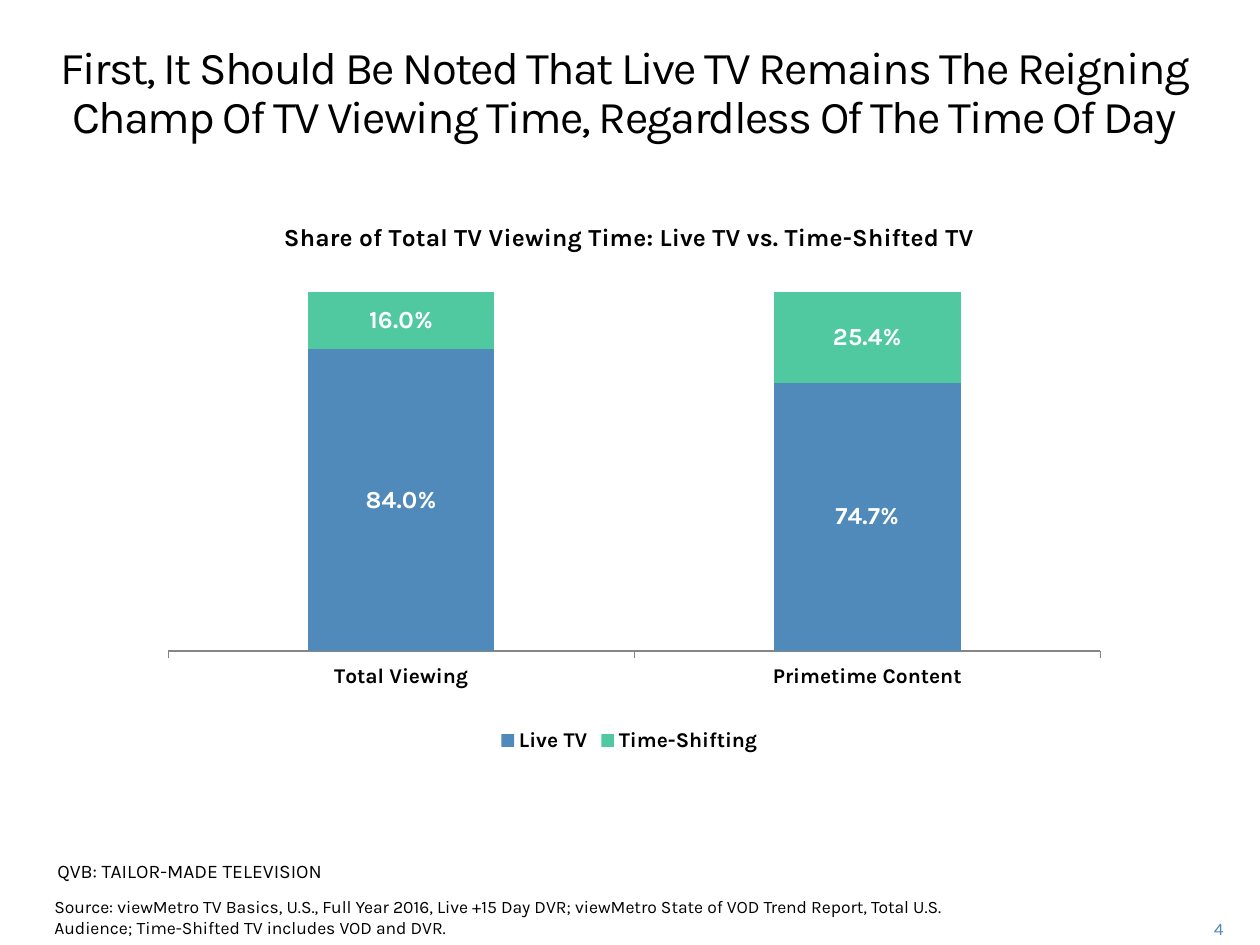
from lxml import etree
from pptx import Presentation
from pptx.chart.data import CategoryChartData
from pptx.dml.color import RGBColor
from pptx.enum.chart import XL_CHART_TYPE, XL_LEGEND_POSITION, XL_TICK_MARK
from pptx.enum.text import MSO_ANCHOR, PP_ALIGN
from pptx.oxml.ns import qn
from pptx.util import Pt

PX = 914400 / 126
FACE = "Karla"
COLORS = {"text": "000000", "live": "508ABA", "shift": "50C8A0",
          "label": "FFFFFF", "axis": "868686"}


def emu(*sizes):
    return [round(size * PX) for size in sizes]


def color(name):
    return RGBColor.from_string(COLORS[name])


def style(font, size, bold=False, hue="text"):
    font.name, font.size, font.bold = FACE, Pt(size), bold
    font.color.rgb = color(hue)


def add_text(slide, box, lines, size, hue="text", align=PP_ALIGN.LEFT, wrap=True):
    frame = slide.shapes.add_textbox(*emu(*box)).text_frame
    frame.word_wrap = wrap
    frame.vertical_anchor = MSO_ANCHOR.TOP
    for i, line in enumerate(lines):
        para = frame.paragraphs[0] if i == 0 else frame.add_paragraph()
        para.text = line
        para.alignment = align
        style(para.font, size, hue=hue)
    return frame


def add_title(slide, box):
    frame = add_text(slide, box, [
        "First, It Should Be Noted That Live TV Remains The Reigning "
        "Champ Of TV Viewing Time, Regardless Of The Time Of Day"],
        26, align=PP_ALIGN.CENTER)
    para = frame.paragraphs[0]
    para.line_spacing = Pt(28)
    para.runs[0].font._element.set("spc", "-100")


def set_plot(chart, **parts):
    """Fix the inner plot area, in fractions of the chart."""
    area = chart._chartSpace.chart.plotArea
    for old in area.findall(qn("c:layout")):
        area.remove(old)
    layout = etree.Element(qn("c:layout"))
    area.insert(0, layout)
    manual = etree.SubElement(layout, qn("c:manualLayout"))
    modes = {"layoutTarget": "inner", "xMode": "edge", "yMode": "edge"}
    for tag, value in {**modes, **parts}.items():
        etree.SubElement(manual, qn("c:" + tag)).set("val", str(value))


def add_share(slide, box):
    data = CategoryChartData(number_format="0.0%")
    data.categories = ["Total Viewing", "Primetime Content"]
    data.add_series("Live TV", (0.84, 0.747))
    data.add_series("Time-Shifting", (0.16, 0.254))
    chart = slide.shapes.add_chart(
        XL_CHART_TYPE.COLUMN_STACKED_100, *emu(*box), data).chart
    style(chart.font, 18)

    title = chart.chart_title
    para = title.text_frame.paragraphs[0]
    para.text = "Share of Total TV Viewing Time: Live TV vs. Time-Shifted TV"
    style(para.font, 14, True)
    title.include_in_layout = True

    chart.has_legend = True
    chart.legend.position = XL_LEGEND_POSITION.BOTTOM
    chart.legend.include_in_layout = False
    style(chart.legend.font, 12, True)

    axis = chart.category_axis
    axis.major_tick_mark = XL_TICK_MARK.OUTSIDE
    axis.format.line.color.rgb = color("axis")
    axis.format.line.width = Pt(0.75)
    style(axis.tick_labels.font, 12, True)
    chart.value_axis.visible = False
    chart.value_axis.has_major_gridlines = False
    chart.value_axis.minimum_scale = 0
    chart.value_axis.maximum_scale = 1

    plot = chart.plots[0]
    plot.gap_width, plot.overlap = 150, 100
    plot.vary_by_categories = False
    for series, hue in zip(plot.series, ("live", "shift")):
        series.format.fill.solid()
        series.format.fill.fore_color.rgb = color(hue)
        labels = series.data_labels
        labels.show_value = True
        labels.number_format = "0.0%"
        labels.number_format_is_linked = False
        style(labels.font, 14, True, "label")
    set_plot(chart, x=0.121, y=0.166, w=0.766, h=0.643)


def add_footer(slide, box):
    left, top, width, _ = box
    add_text(slide, (left, top + 37, 993, 55), [
        "Source: viewMetro TV Basics, U.S., Full Year 2016, Live +15 Day DVR; "
        "viewMetro State of VOD Trend Report, Total U.S.",
        "Audience; Time-Shifted TV includes VOD and DVR."], 10, wrap=False)
    add_text(slide, (left + 3, top, 388, 59), ["QVB: TAILOR-MADE TELEVISION"], 11)
    add_text(slide, (left + width - 77, top + 59, 77, 32), ["4"], 10, "live",
             PP_ALIGN.RIGHT)


def main():
    deck = Presentation()
    deck.slide_width, deck.slide_height = emu(1260, 945)
    slide = deck.slides.add_slide(deck.slide_layouts[6])
    add_title(slide, (21, 38, 1207, 158))
    add_share(slide, (21, 199, 1217, 559))
    add_footer(slide, (42, 853, 1194, 92))
    deck.save("out.pptx")


if __name__ == "__main__":
    main()
